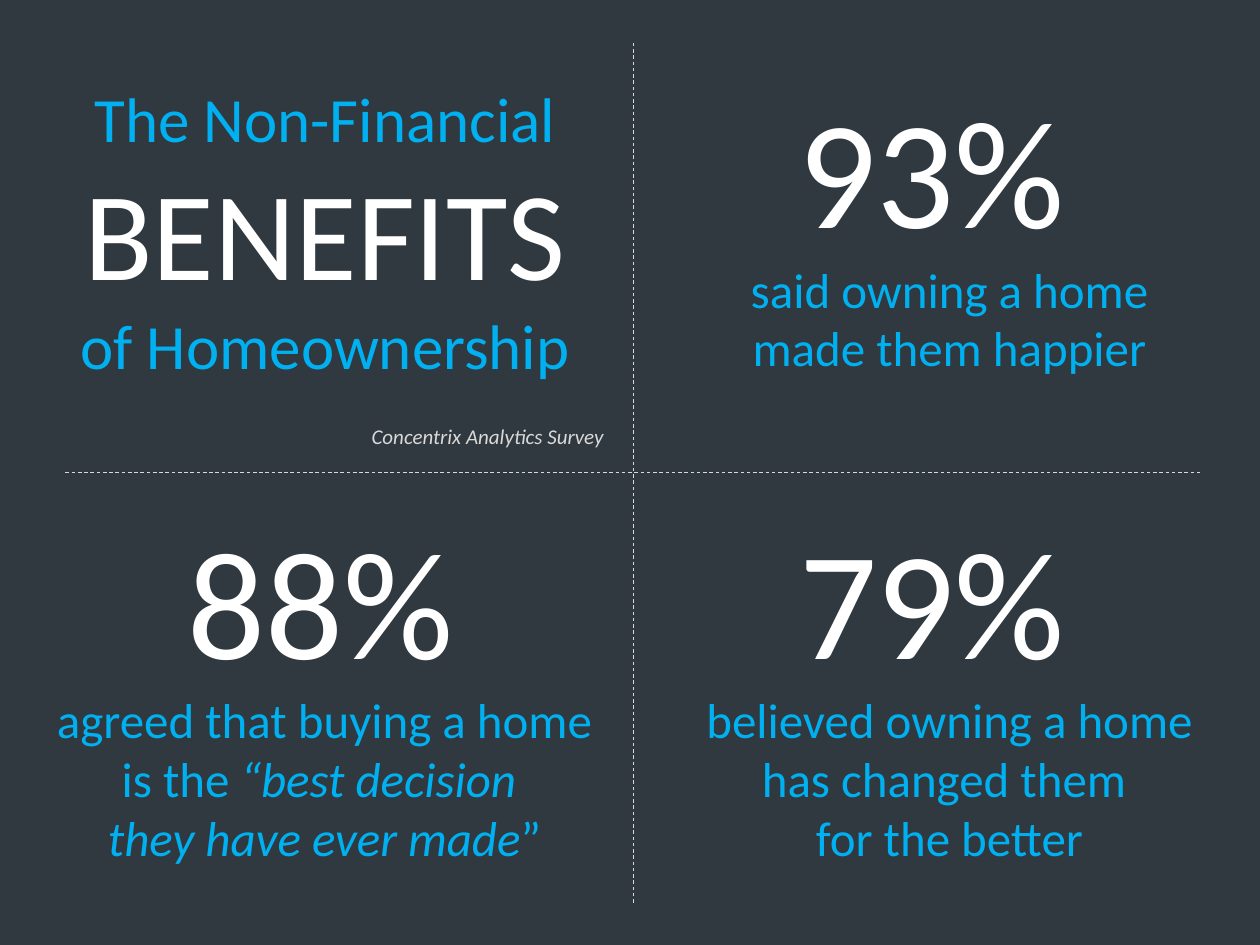
from pptx import Presentation
from pptx.dml.color import RGBColor
from pptx.enum.dml import MSO_LINE_DASH_STYLE as Dash
from pptx.enum.shapes import MSO_CONNECTOR as Connector, MSO_SHAPE as Shape
from pptx.enum.text import MSO_AUTO_SIZE as AutoSize, PP_ALIGN as Align
from pptx.oxml.ns import qn
from pptx.util import Inches, Pt
from lxml import etree

FONT = "Calibri"
SLATE, BLUE, DARK_BLUE, WHITE, GREY = "2F393F", "00B0F0", "0070C0", "FFFFFF", "D9D9D9"


def color(value):
    return RGBColor.from_string(value)


def style(font, size=None, fill=None, italic=None):
    """Set only the font properties that are given."""
    if size:
        font.size = Pt(size)
    if fill:
        font.color.rgb = color(fill)
    if italic is not None:
        font.italic = italic


def add_background(page, width, height):
    panel = page.shapes.add_shape(Shape.RECTANGLE, 0, 0, width, height)
    panel.shadow.inherit = False
    panel.fill.solid()
    panel.fill.fore_color.rgb = color(SLATE)
    panel.line.fill.background()


def add_divider(page, start, end):
    line = page.shapes.add_connector(
        Connector.STRAIGHT, *(Inches(value) for value in start + end))
    line.line.color.rgb = color(GREY)
    line.line.width = Pt(0.5)
    line.line.dash_style = Dash.DASH
    etree.SubElement(line._element.spPr, qn("a:effectLst"))


def add_text(page, place, paragraphs, align=Align.CENTER, wrap=True):
    """Each paragraph is (font settings, spans); each span is (text, own settings)."""
    box = page.shapes.add_textbox(*(Inches(value) for value in place))
    frame = box.text_frame
    frame.word_wrap = wrap
    frame.auto_size = AutoSize.SHAPE_TO_FIT_TEXT
    for index, (settings, spans) in enumerate(paragraphs):
        para = frame.paragraphs[0] if index == 0 else frame.add_paragraph()
        para.alignment = align
        para.font.name = FONT
        style(para.font, **settings)
        for text, own in spans:
            span = para.add_run()
            span.text = text
            span.font.name = FONT
            style(span.font, **{**settings, **own})


def add_statistic(page, place, figure, statement):
    """A large percentage above the lines of a statement."""
    big = {"size": 88, "fill": WHITE}
    small = {"size": 28, "fill": BLUE}
    add_text(page, place, [(big, figure)] + [(small, spans) for spans in statement])


def main():
    deck = Presentation()
    deck.slide_width, deck.slide_height = Inches(10), Inches(7.5)
    page = deck.slides.add_slide(deck.slide_layouts[6])
    add_background(page, deck.slide_width, deck.slide_height)

    add_statistic(page, (5.39, 3.96, 4.29, 3), [("79% ", {})], [
        [("believed owning a home has changed them ", {})],
        [("for the better", {})],
    ])
    add_statistic(page, (5.58, 0.54, 3.91, 2.52), [("93% ", {})], [
        [("said owning a home made them happier", {})],
    ])
    add_statistic(
        page, (0.32, 3.96, 4.51, 3),
        [("88%", {}), (" ", {"size": 18, "fill": DARK_BLUE})],
        [
            [("agreed that buying a home is the ", {}),
             ("“best decision ", {"italic": True})],
            [("they have ever made", {"italic": True}), ("”", {})],
        ])

    add_divider(page, (5.03, 0.34), (5.03, 7.17))
    add_divider(page, (0.52, 3.75), (9.54, 3.75))

    title = {"size": 36, "fill": BLUE}
    add_text(page, (0.5, 0.58, 4.16, 2.52), [
        (title, [("The Non-Financial ", {}),
                 ("BENEFITS ", {"size": 72, "fill": WHITE})]),
        (title, [("of Homeownership", {})]),
    ])
    add_text(page, (2.85, 3.31, 2.08, 0.3), [
        ({"size": 12, "fill": GREY, "italic": True},
         [("Concentrix Analytics Survey", {})]),
    ], align=Align.LEFT, wrap=False)

    deck.save("out.pptx")


if __name__ == "__main__":
    main()
